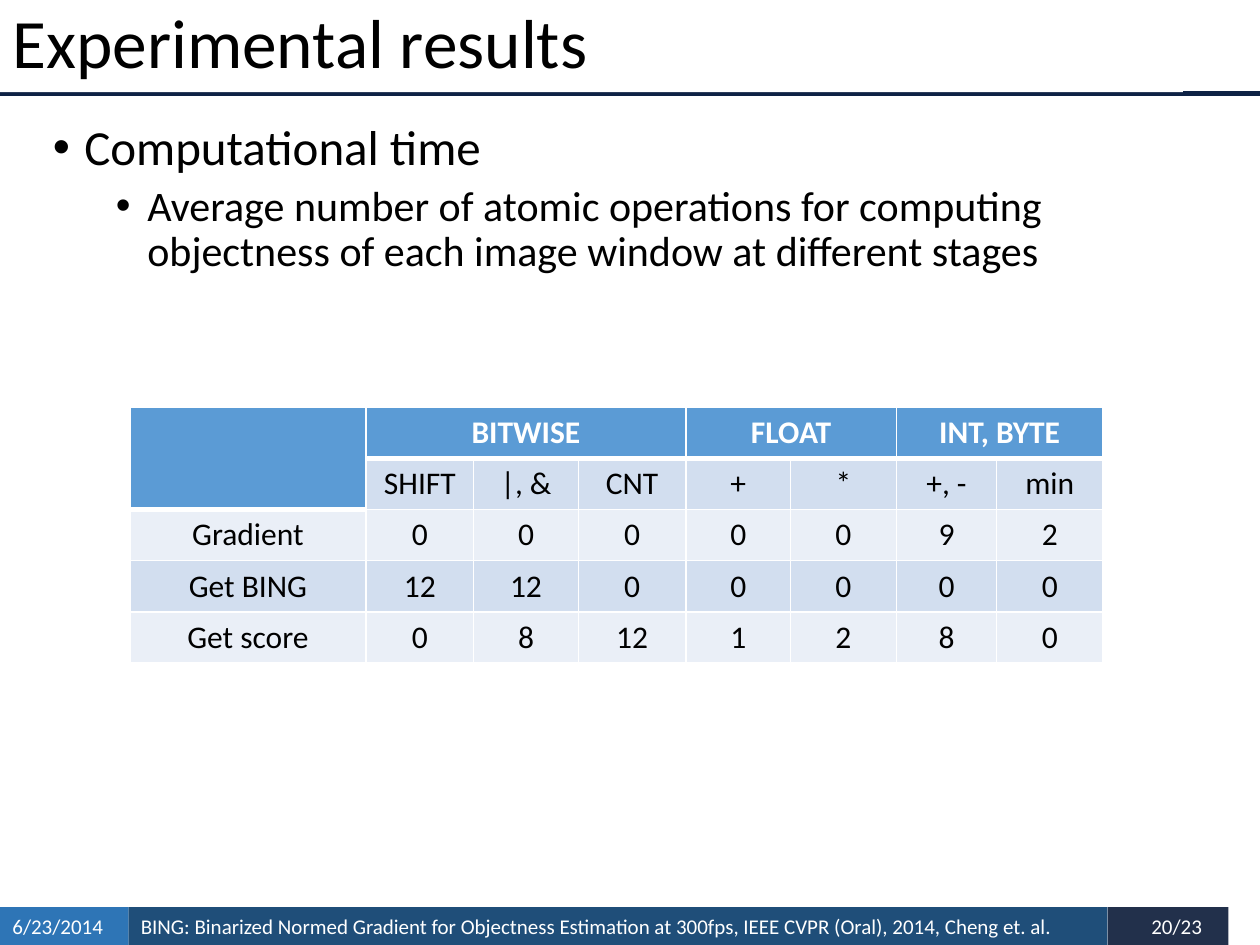
"""Build the "Experimental results" slide with its table of atomic operations."""
from lxml import etree
from pptx import Presentation
from pptx.dml.color import RGBColor
from pptx.enum.shapes import MSO_CONNECTOR, MSO_SHAPE
from pptx.enum.text import MSO_ANCHOR, MSO_AUTO_SIZE, PP_ALIGN
from pptx.oxml.ns import qn
from pptx.util import Pt

RECTANGLE = MSO_SHAPE.RECTANGLE
STRAIGHT = MSO_CONNECTOR.STRAIGHT
MIDDLE = MSO_ANCHOR.MIDDLE
NO_AUTOFIT = MSO_AUTO_SIZE.NONE
LEFT, CENTER, RIGHT = PP_ALIGN.LEFT, PP_ALIGN.CENTER, PP_ALIGN.RIGHT

COLORS = {
    "white": "FFFFFF", "black": "000000", "rule": "0E2245",
    "date": "2E75B6", "citation": "1F4E79", "page": "22304B",
    "header": "5B9BD5", "dark band": "D2DEEF", "light band": "EAEFF7",
}


def style_text(paragraph, size, color="black", bold=False):
    for run in paragraph.runs:
        run.font.name = "Calibri"
        run.font.size = Pt(size)
        run.font.bold = bold
        run.font.color.rgb = RGBColor.from_string(COLORS[color])


def add_border(cell, side, width):
    border = etree.SubElement(cell._tc.get_or_add_tcPr(), qn(f"a:ln{side}"), w=str(Pt(width)))
    fill = etree.SubElement(border, qn("a:solidFill"))
    etree.SubElement(fill, qn("a:srgbClr"), val=COLORS["white"])


presentation = Presentation()
presentation.slide_width, presentation.slide_height = Pt(720), Pt(540)
slide = presentation.slides.add_slide(presentation.slide_layouts[1])
shapes = slide.shapes
title, body = shapes.title, slide.placeholders[1]

citation = ("BING: Binarized Normed Gradient for Objectness Estimation at 300fps, "
            "IEEE CVPR (Oral), 2014, Cheng et. al.")
footer = [
    ("page", 632.9, 69.1, "20/23", RIGHT, 15.1),
    ("citation", 73.4, 559.5, citation, LEFT, 7.2),
    ("date", 0, 73.4, "6/23/2014", LEFT, 7.2),
]
for color, left, width, text, alignment, right_margin in footer:
    block = shapes.add_shape(RECTANGLE, Pt(left), Pt(518.4), Pt(width), Pt(21.6))
    block.shadow.inherit = False
    block.fill.solid()
    block.fill.fore_color.rgb = RGBColor.from_string(COLORS[color])
    block.line.fill.background()
    frame = block.text_frame
    frame.text = text
    frame.word_wrap = True
    frame.vertical_anchor = MIDDLE
    frame.margin_right = Pt(right_margin)
    frame.paragraphs[0].alignment = alignment
    style_text(frame.paragraphs[0], 12, "white")

rule = shapes.add_connector(STRAIGHT, Pt(0), Pt(53.3), Pt(720), Pt(53.3))
rule.line.color.rgb = RGBColor.from_string(COLORS["rule"])
rule.line.width = Pt(3)
etree.SubElement(rule._element.spPr, qn("a:effectLst"))

for placeholder in (title, body):
    shapes._spTree.append(placeholder._element)

title.left, title.top, title.width, title.height = Pt(0), Pt(0), Pt(676), Pt(52.6)
title.fill.solid()
title.fill.fore_color.rgb = RGBColor.from_string(COLORS["white"])
title.text_frame.text = "Experimental results"
title.text_frame.auto_size = NO_AUTOFIT
title.text_frame.vertical_anchor = MIDDLE
heading = title.text_frame.paragraphs[0]
heading.alignment = LEFT
heading.line_spacing = 0.9
style_text(heading, 39.6)

body.left, body.top, body.width, body.height = Pt(23), Pt(67), Pt(670.3), Pt(419)
bullets = [
    ("Computational time", 28, 18, 0),
    ("Average number of atomic operations for computing "
     "objectness of each image window at different stages", 24, 54, 5),
]
body.text_frame.text = "\n".join(bullet[0] for bullet in bullets)
body.text_frame.auto_size = NO_AUTOFIT
for level, (text, size, indent, space_before) in enumerate(bullets):
    paragraph = body.text_frame.paragraphs[level]
    paragraph.level = level
    properties = paragraph._p.get_or_add_pPr()
    properties.set("marL", str(Pt(indent)))
    properties.set("indent", str(Pt(-18)))
    etree.SubElement(properties, qn("a:buFont"), typeface="Arial")
    etree.SubElement(properties, qn("a:buChar"), char="•")
    paragraph.line_spacing = 0.9
    paragraph.space_before = Pt(space_before)
    style_text(paragraph, size)

rows = [
    ["", "BITWISE", "", "", "FLOAT", "", "INT, BYTE", ""],
    ["", "SHIFT", "|, &", "CNT", "+", "*", "+, -", "min"],
    ["Gradient", "0", "0", "0", "0", "0", "9", "2"],
    ["Get BING", "12", "12", "0", "0", "0", "0", "0"],
    ["Get score", "0", "8", "12", "1", "2", "8", "0"],
]
column_widths = [135, 61.5, 59.8, 61.5, 59.8, 60.5, 57.3, 60.8]
row_height = 29.2
table = shapes.add_table(len(rows), len(column_widths), Pt(74.2), Pt(232.8),
                         Pt(sum(column_widths)), Pt(row_height * len(rows))).table
for column, width in zip(table.columns, column_widths):
    column.width = Pt(width)
for row_index, row in enumerate(rows):
    table.rows[row_index].height = Pt(row_height)
    for column_index, text in enumerate(row):
        cell = table.cell(row_index, column_index)
        is_header = row_index == 0 or (row_index == 1 and column_index == 0)
        band = "dark band" if row_index % 2 else "light band"
        add_border(cell, "L", 1)
        add_border(cell, "R", 1)
        if row_index == 0:
            add_border(cell, "T", 1)
        add_border(cell, "B", 3 if is_header else 1)
        cell.fill.solid()
        cell.fill.fore_color.rgb = RGBColor.from_string(COLORS["header" if is_header else band])
        if text:
            cell.text_frame.text = text
            paragraph = cell.text_frame.paragraphs[0]
            paragraph.alignment = CENTER
            style_text(paragraph, 18, "white" if is_header else "black", is_header)

for first, last in [((0, 0), (1, 0)), ((0, 1), (0, 3)), ((0, 4), (0, 5)), ((0, 6), (0, 7))]:
    table.cell(*first).merge(table.cell(*last))

presentation.save("out.pptx")
